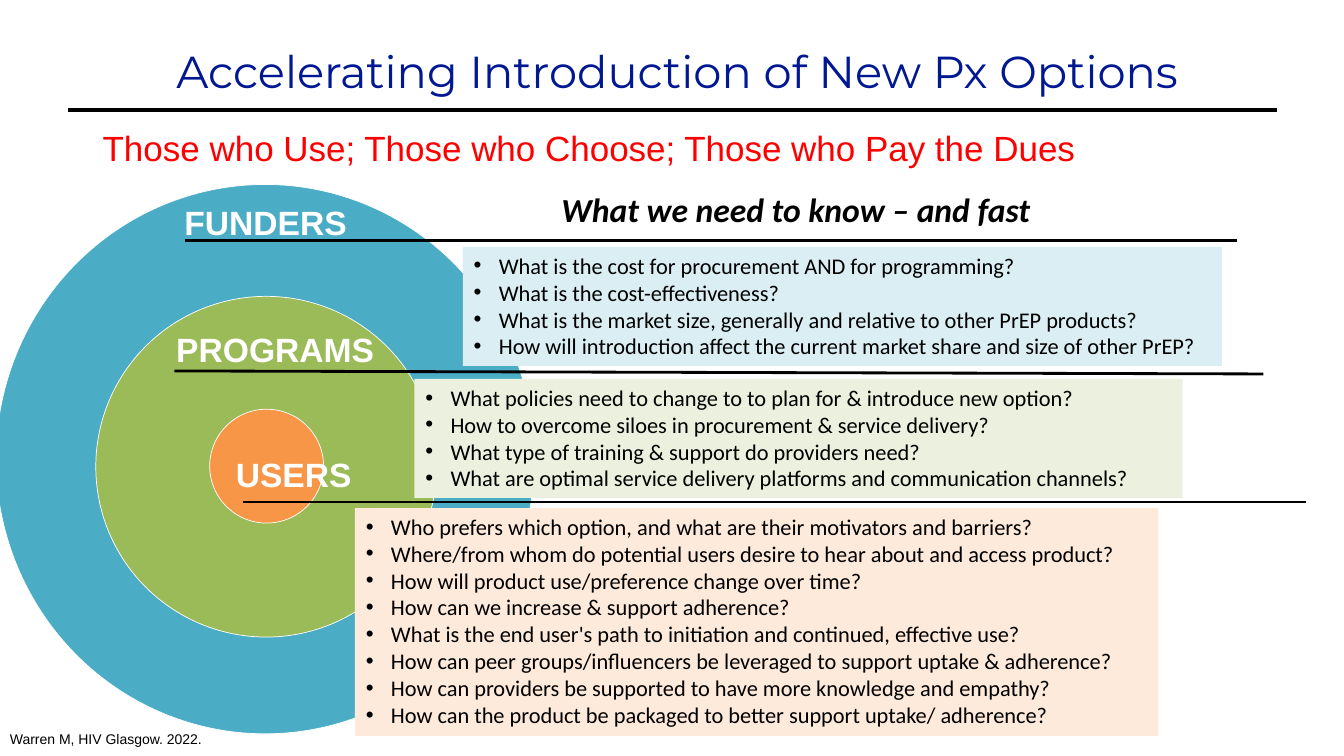
from lxml import etree
from pptx import Presentation
from pptx.dml.color import RGBColor
from pptx.enum.shapes import MSO_CONNECTOR, MSO_SHAPE
from pptx.enum.text import MSO_ANCHOR, PP_ALIGN
from pptx.oxml.ns import qn
from pptx.util import Inches, Pt

OVAL, RECTANGLE = MSO_SHAPE.OVAL, MSO_SHAPE.RECTANGLE
STRAIGHT = MSO_CONNECTOR.STRAIGHT
TOP = MSO_ANCHOR.TOP
LEFT, CENTER = PP_ALIGN.LEFT, PP_ALIGN.CENTER

BLACK, WHITE, NAVY, RED = "000000", "FFFFFF", "011892", "FF0000"

# Left, top, width, height, fill
RINGS = [
    (-0.04, 1.83, 5.34, 5.45, "4BACC6"),
    (0.95, 2.94, 3.38, 3.38, "9BBB59"),
    (2.08, 4.06, 1.13, 1.13, "F79646"),
]

# Left, top, width, text
RING_LABELS = [
    (1.73, 1.95, 1.87, "FUNDERS"),
    (1.65, 3.21, 2.26, "PROGRAMS"),
    (2.24, 4.45, 1.73, "USERS"),
]

# Start x, start y, end x, end y, weight
RULES = [
    (0.67, 1.09, 12.67, 1.09, 3),
    (1.84, 2.39, 12.27, 2.39, 2),
    (1.73, 3.68, 12.53, 3.71, 2),
    (2.41, 4.98, 12.95, 4.98, 2),
]

# Left, top, width, height, fill, questions
PANELS = [
    (4.59, 2.45, 7.53, 1.18, "DBEEF4", [
        "What is the cost for procurement AND for programming?",
        "What is the cost-effectiveness?",
        "What is the market size, generally and relative to other PrEP products?",
        "How will introduction affect the current market share and size of other PrEP?",
    ]),
    (4.11, 3.76, 7.62, 1.18, "EBF1DE", [
        "What policies need to change to to plan for & introduce new option?",
        "How to overcome siloes in procurement & service delivery?",
        "What type of training & support do providers need?",
        "What are optimal service delivery platforms and communication channels?",
    ]),
    (3.52, 5.04, 7.97, 2.26, "FDEADA", [
        "Who prefers which option, and what are their motivators and barriers?",
        "Where/from whom do potential users desire to hear about and access product?",
        "How will product use/preference change over time?",
        "How can we increase & support adherence?",
        "What is the end user's path to initiation and continued, effective use?",
        "How can peer groups/influencers be leveraged to support uptake & adherence?",
        "How can providers be supported to have more knowledge and empathy?",
        "How can the product be packaged to better support uptake/ adherence?",
    ]),
]


def color(value):
    return RGBColor.from_string(value)


def add_span(para, text, size, font, tint, bold=False, italic=False):
    span = para.add_run()
    span.text = text
    span.font.size = Pt(size)
    span.font.name = font
    span.font.color.rgb = color(tint)
    span.font.bold = bold
    span.font.italic = italic


def add_text(page, left, top, width, height, text, size, font, tint,
             align=LEFT, spacing=1.0, **style):
    box = page.shapes.add_textbox(
        Inches(left), Inches(top), Inches(width), Inches(height))
    box.text_frame.word_wrap = True
    para = box.text_frame.paragraphs[0]
    para.alignment = align
    para.line_spacing = spacing
    add_span(para, text, size, font, tint, **style)


def add_filled(page, kind, left, top, width, height, fill):
    shape = page.shapes.add_shape(
        kind, Inches(left), Inches(top), Inches(width), Inches(height))
    shape.shadow.inherit = False
    shape.fill.solid()
    shape.fill.fore_color.rgb = color(fill)
    return shape


def add_ring(page, left, top, width, height, fill):
    ring = add_filled(page, OVAL, left, top, width, height, fill)
    ring.line.color.rgb = color(WHITE)
    ring.line.width = Pt(0.5)


def add_rule(page, x1, y1, x2, y2, weight):
    rule = page.shapes.add_connector(
        STRAIGHT, Inches(x1), Inches(y1), Inches(x2), Inches(y2))
    rule.line.color.rgb = color(BLACK)
    rule.line.width = Pt(weight)
    etree.SubElement(rule._element.spPr, qn("a:effectLst"))


def add_bullet(para):
    props = para._p.get_or_add_pPr()
    props.set("marL", str(Inches(0.26)))
    props.set("indent", str(Inches(-0.25)))
    etree.SubElement(props, qn("a:buFont")).set("typeface", "Arial")
    etree.SubElement(props, qn("a:buChar")).set("char", "•")


def add_panel(page, left, top, width, height, fill, questions):
    panel = add_filled(page, RECTANGLE, left, top, width, height, fill)
    panel.line.fill.background()
    frame = panel.text_frame
    frame.word_wrap = True
    frame.vertical_anchor = TOP
    for index, question in enumerate(questions):
        para = frame.add_paragraph() if index else frame.paragraphs[0]
        para.alignment = LEFT
        add_bullet(para)
        add_span(para, question, 16, "Calibri", BLACK)


def main():
    deck = Presentation()
    deck.slide_width, deck.slide_height = Inches(13.33), Inches(7.5)
    page = deck.slides.add_slide(deck.slide_layouts[6])

    # Headings and citation
    add_text(page, 0.11, 0.38, 13.22, 0.64,
             "Accelerating Introduction of New Px Options",
             32, "Montserrat", NAVY, align=CENTER)
    add_text(page, 0, 7.22, 12.75, 0.25, "Warren M, HIV Glasgow. 2022.",
             10, "Arial", BLACK, spacing=0.9)
    add_text(page, 0.92, 1.25, 11.9, 0.6,
             "Those who Use; Those who Choose; Those who Pay the Dues",
             25, "Arial", RED, spacing=0.9)

    # Nested rings with their labels and rules
    for ring in RINGS:
        add_ring(page, *ring)
    add_text(page, 5.47, 1.83, 5.01, 0.5, "What we need to know – and fast",
             24, "Calibri", BLACK, bold=True, italic=True)
    for left, top, width, label in RING_LABELS:
        add_text(page, left, top, width, 0.5, label, 24, "Arial", WHITE, bold=True)
    for rule in RULES:
        add_rule(page, *rule)

    # Question panels
    for panel in PANELS:
        add_panel(page, *panel)

    deck.save("out.pptx")


if __name__ == "__main__":
    main()
